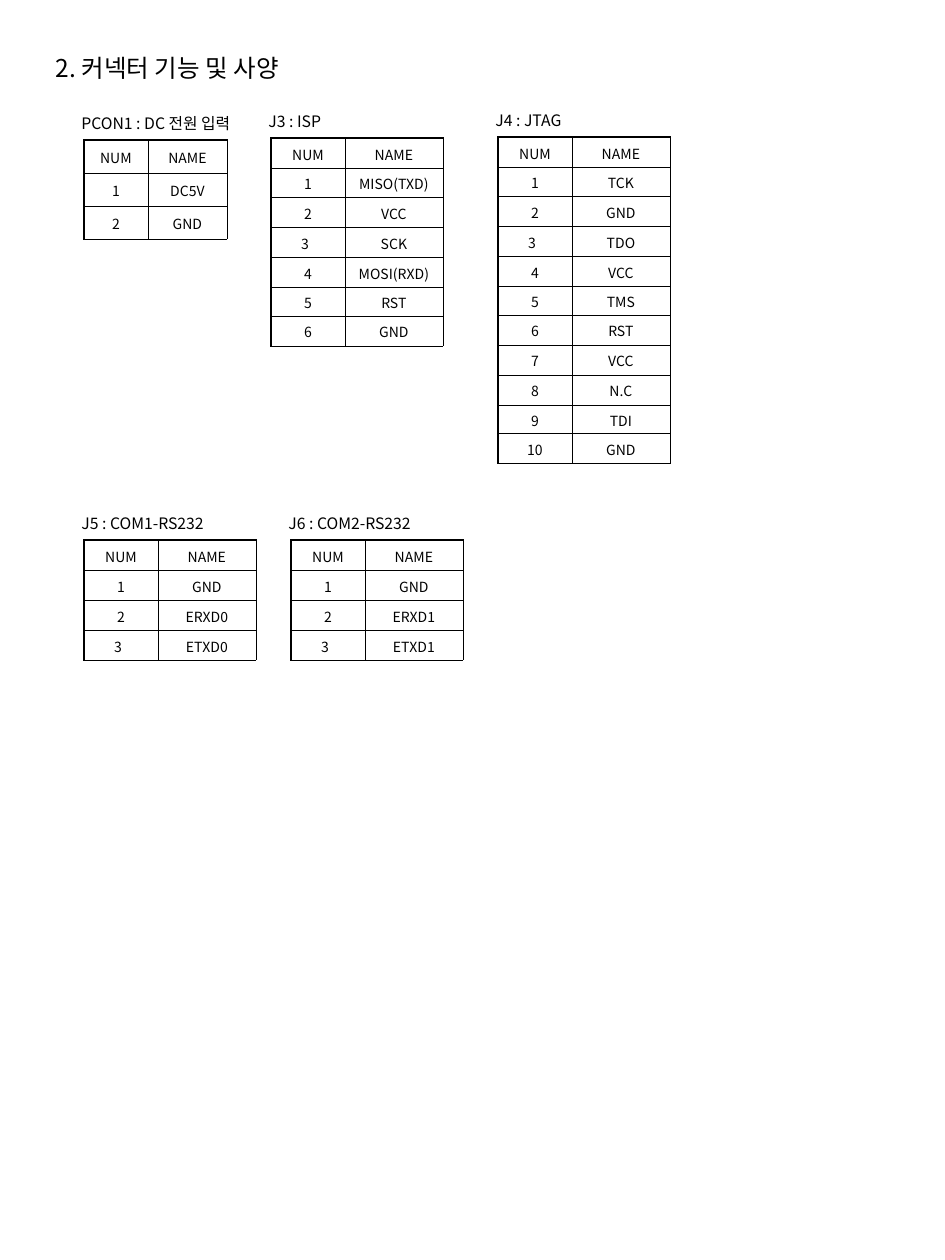
from lxml import etree
from pptx import Presentation
from pptx import util as u
from pptx.dml.color import RGBColor
from pptx.enum import text
from pptx.oxml import ns

COLORS = {"ink": "000000"}
FONT = "Noto Sans CJK KR"
SCALE = u.Inches(1) / 126


def px(length):
    return u.Emu(round(length * SCALE))


class ConnectorSheet:
    def __init__(self, slide):
        self.slide = slide
        self.thin, self.thick = 0.25, 1

    def add_words(self, frame, words, size, align):
        paragraph = frame.paragraphs[0]
        paragraph.alignment = align
        run = paragraph.add_run()
        run.text = words
        run.font.size = u.Pt(size)
        run.font.name = FONT
        run.font.color.rgb = RGBColor.from_string(COLORS["ink"])
        etree.SubElement(run._r.get_or_add_rPr(), ns.qn("a:ea"), typeface=FONT)

    def heading(self, words, left, top, width, height):
        title = self.slide.shapes.title
        title.left, title.top = px(left), px(top)
        title.width, title.height = px(width), px(height)
        frame = title.text_frame
        frame.word_wrap = False
        frame.auto_size = text.MSO_AUTO_SIZE.SHAPE_TO_FIT_TEXT
        frame.vertical_anchor = text.MSO_ANCHOR.TOP
        self.add_words(frame, words, 14, text.PP_ALIGN.LEFT)

    def caption(self, words, left, top, width):
        box = self.slide.shapes.add_textbox(px(left), px(top), px(width), px(31))
        frame = box.text_frame
        frame.word_wrap = True
        frame.auto_size = text.MSO_AUTO_SIZE.SHAPE_TO_FIT_TEXT
        self.add_words(frame, words, 9, text.PP_ALIGN.LEFT)

    def borders(self, cell, is_first_column, is_header):
        properties = cell._tc.get_or_add_tcPr()
        widths = {
            "a:lnL": self.thick if is_first_column else self.thin,
            "a:lnR": self.thin,
            "a:lnT": self.thick if is_header else self.thin,
            "a:lnB": self.thin,
        }
        for side, width in widths.items():
            line = etree.SubElement(properties, ns.qn(side), w=str(int(u.Pt(width))))
            fill = etree.SubElement(line, ns.qn("a:solidFill"))
            etree.SubElement(fill, ns.qn("a:srgbClr"), val=COLORS["ink"])

    def pin_cell(self, cell, words, is_first_column, is_header):
        self.borders(cell, is_first_column, is_header)
        cell.fill.background()
        cell.margin_left = px(5)
        cell.margin_right = px(11 if words == "3" else 5)
        cell.margin_top, cell.margin_bottom = px(5), px(3)
        cell.vertical_anchor = text.MSO_ANCHOR.MIDDLE
        self.add_words(cell.text_frame, words, 8, text.PP_ALIGN.CENTER)

    def pin_table(self, signals, left, top, columns, height):
        rows = [("NUM", "NAME")]
        rows += [(str(pin), signal) for pin, signal in enumerate(signals, 1)]
        count = len(rows)
        table = self.slide.shapes.add_table(
            count, 2, px(left), px(top), px(sum(columns)), px(height)
        ).table
        table.first_row = table.horz_banding = False
        for column, width in zip(table.columns, columns):
            column.width = px(width)
        edges = [round(i * height / count) for i in range(count + 1)]
        for r, row in enumerate(rows):
            table.rows[r].height = px(edges[r + 1] - edges[r])
            for c, words in enumerate(row):
                self.pin_cell(table.cell(r, c), words, c == 0, r == 0)

    def connector(self, name, signals, left, top, height,
                  columns=(74, 98), caption_width=168):
        self.caption(name, left - 15, top - 32, caption_width)
        self.pin_table(signals, left, top, columns, height)


def main():
    deck = Presentation()
    deck.slide_width, deck.slide_height = px(945), px(1260)
    sheet = ConnectorSheet(deck.slides.add_slide(deck.slide_layouts[5]))

    sheet.heading("2. 커넥터 기능 및 사양", 43, 47, 277, 43)
    sheet.connector("PCON1 : DC 전원 입력", ["DC5V", "GND"], 84, 140, 99,
                    columns=(64, 79), caption_width=212)
    sheet.connector("J3 : ISP",
                    ["MISO(TXD)", "VCC", "SCK", "MOSI(RXD)", "RST", "GND"],
                    271, 138, 208)
    sheet.connector("J4 : JTAG",
                    ["TCK", "GND", "TDO", "VCC", "TMS",
                     "RST", "VCC", "N.C", "TDI", "GND"],
                    498, 137, 327)
    for port, left in enumerate((84, 291)):
        sheet.connector(f"J{port + 5} : COM{port + 1}-RS232",
                        ["GND", f"ERXD{port}", f"ETXD{port}"], left, 540, 120)

    deck.save("out.pptx")


if __name__ == "__main__":
    main()
